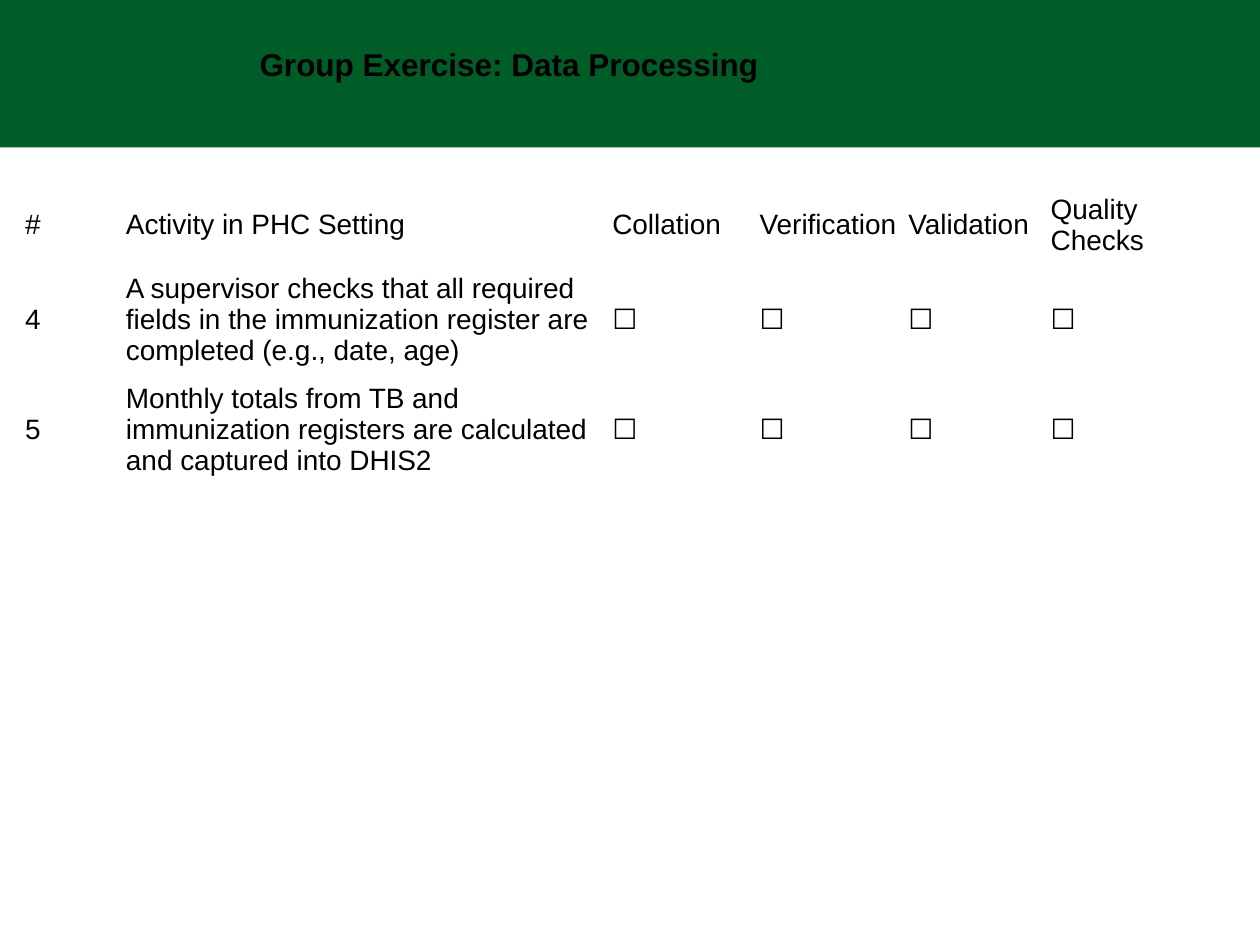
from dataclasses import dataclass

from pptx import Presentation
from pptx.dml.color import RGBColor as RGB
from pptx.enum.shapes import MSO_SHAPE as Shape
from pptx.enum.text import MSO_ANCHOR as Anchor, PP_ALIGN as Align
from pptx.util import Inches, Pt


@dataclass(frozen=True)
class Theme:
    green: RGB = RGB(0x00, 0x5D, 0x28)
    ink: RGB = RGB(0, 0, 0)
    font: str = "Arial"
    head: int = 18
    body: int = 16


THEME = Theme()
WIDE, HIGH = 10, 7.5
COLS = (0.8, 3.86, 1.17, 1.18, 1.13, 1.13)
ROWS = (0.25, 0.97, 0.77)
HEADS = ("#", "Activity in PHC Setting", "Collation", "Verification",
         "Validation", "Quality Checks")
TASKS = (
    ("4", "A supervisor checks that all required fields in the immunization "
          "register are completed (e.g., date, age)"),
    ("5", "Monthly totals from TB and immunization registers are calculated "
          "and captured into DHIS2"),
)
TICKS = ("☐",) * 4


def put_text(frame, text, size=THEME.body, bold=False):
    frame.word_wrap = True
    para = frame.paragraphs[0]
    para.alignment = Align.LEFT
    run = para.add_run()
    run.text = text
    font = run.font
    font.name, font.size, font.bold = THEME.font, Pt(size), bold
    font.color.rgb = THEME.ink


def add_band(slide, box):
    band = slide.shapes.add_shape(Shape.RECTANGLE, *map(Inches, box))
    band.shadow.inherit = False
    band.fill.solid()
    band.fill.fore_color.rgb = THEME.green
    band.line.fill.background()
    # Keep the band behind the title
    slide.shapes._spTree.insert(2, band._element)


def add_title(slide, box, text):
    title = slide.shapes.title
    title.left, title.top, title.width, title.height = map(Inches, box)
    frame = title.text_frame
    frame.vertical_anchor = Anchor.MIDDLE
    # Insets set the heading in from the left and above the box's middle
    frame.margin_left, frame.margin_bottom = Inches(1.9), Inches(0.34)
    put_text(frame, text, size=THEME.head, bold=True)


def add_grid(slide, box, data):
    frame = slide.shapes.add_table(len(data), len(COLS), *map(Inches, box))
    table = frame.table
    table.first_row = table.horz_banding = False
    for col, wide in zip(table.columns, COLS):
        col.width = Inches(wide)
    for row, high, texts in zip(table.rows, ROWS, data):
        row.height = Inches(high)
        for cell, text in zip(row.cells, texts):
            cell.fill.background()
            cell.vertical_anchor = Anchor.MIDDLE
            cell.margin_left = cell.margin_right = Inches(0.04)
            cell.margin_top = cell.margin_bottom = Inches(0.02)
            put_text(cell.text_frame, text)
    frame.height = Inches(box[3])


def main():
    deck = Presentation()
    deck.slide_width, deck.slide_height = Inches(WIDE), Inches(HIGH)
    slide = deck.slides.add_slide(deck.slide_layouts[5])
    left = 0.016 * WIDE

    # Heading
    add_band(slide, (0, 0, WIDE, 1.17))
    add_title(slide, (left, 0.3, 7.83, 0.71),
              "Group Exercise: Data Processing")

    # Exercise table
    data = (HEADS, *(task + TICKS for task in TASKS))
    add_grid(slide, (left, 1.52, sum(COLS), 2.39), data)

    deck.save("out.pptx")


if __name__ == "__main__":
    main()
